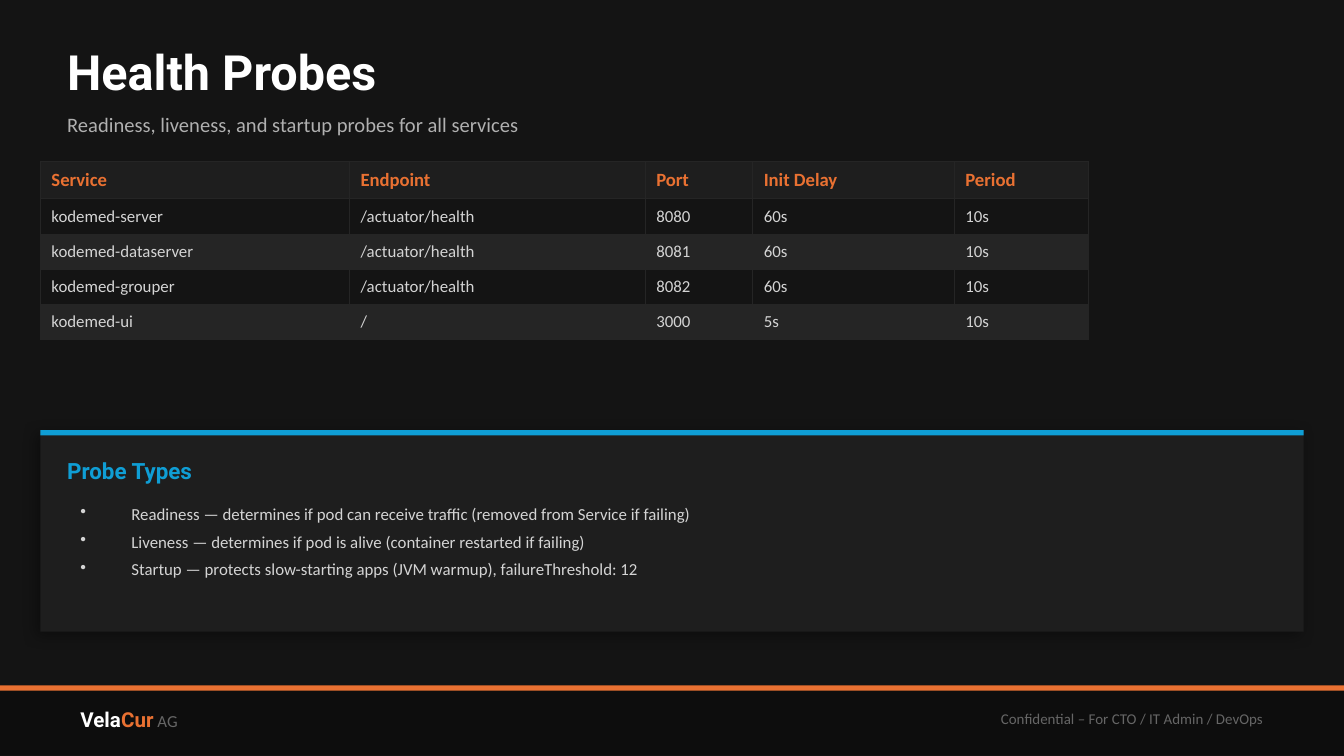
"""Build the Health Probes slide."""
from dataclasses import dataclass

from lxml import etree
from pptx import Presentation
from pptx.dml.color import RGBColor
from pptx.enum.shapes import MSO_SHAPE
from pptx.enum.text import MSO_ANCHOR, PP_ALIGN
from pptx.oxml import parse_xml
from pptx.oxml.ns import qn
from pptx.util import Inches, Pt

RECTANGLE = MSO_SHAPE.RECTANGLE
TOP, MIDDLE = MSO_ANCHOR.TOP, MSO_ANCHOR.MIDDLE
LEFT, RIGHT = PP_ALIGN.LEFT, PP_ALIGN.RIGHT
DRAWING_NS = "http://schemas.openxmlformats.org/drawingml/2006/main"


@dataclass(frozen=True)
class Theme:
    """Colours, fonts and type sizes of the deck."""

    background: str = "141414"
    footer: str = "0D0D0D"
    panel: str = "1E1E1E"
    band: str = "252525"
    orange: str = "E97132"
    blue: str = "0F9ED5"
    white: str = "FFFFFF"
    body: str = "D4D4D4"
    subtle: str = "B0B0B0"
    faint: str = "666666"
    heading_font: str = "Roboto"
    body_font: str = "Calibri"
    title_size: int = 26
    panel_title_size: int = 12
    lead_size: int = 11
    header_size: int = 10
    body_size: int = 9
    note_size: int = 8


class SlideBuilder:
    """Holds the theme and the current page and adds elements to it."""

    def __init__(self, page, theme):
        self.page = page
        self.theme = theme
        page.background.fill.solid()
        page.background.fill.fore_color.rgb = RGBColor.from_string(theme.background)

    def heading(self, size, color):
        """Return the format of bold heading text."""
        return {"name": self.theme.heading_font, "size": Pt(size), "bold": True, "color": color}

    def plain(self, size, color, bold=False):
        """Return the format of body text."""
        return {"name": self.theme.body_font, "size": Pt(size), "bold": bold, "color": color}

    def add_span(self, para, text, style):
        """Add one formatted span to a paragraph."""
        span = para.add_run()
        span.text = text
        for key, value in style.items():
            if key == "color":
                span.font.color.rgb = RGBColor.from_string(value)
            else:
                setattr(span.font, key, value)

    def bar(self, left, top, width, height, color, shadow=False):
        """Add a filled rectangle, with a soft shadow on request."""
        box = self.page.shapes.add_shape(
            RECTANGLE, Inches(left), Inches(top), Inches(width), Inches(height))
        box.shadow.inherit = False
        box.fill.solid()
        box.fill.fore_color.rgb = RGBColor.from_string(color)
        box.line.fill.background()
        if shadow:
            effects = box._element.spPr.find(qn("a:effectLst"))
            effects.append(parse_xml(
                f'<a:outerShdw xmlns:a="{DRAWING_NS}" blurRad="{Pt(8)}" dist="{Pt(3)}" '
                'dir="8100000" algn="bl" rotWithShape="0"><a:srgbClr val="000000">'
                '<a:alpha val="35000"/></a:srgbClr></a:outerShdw>'))

    def text(self, left, top, width, height, spans, align=LEFT, inset=0.0):
        """Add a one-line text box made of (text, style) spans."""
        frame = self.frame(left, top, width, height, MIDDLE, inset)
        frame.paragraphs[0].alignment = align
        for words, style in spans:
            self.add_span(frame.paragraphs[0], words, style)

    def frame(self, left, top, width, height, anchor, inset):
        """Add an empty text box and return its text frame."""
        box = self.page.shapes.add_textbox(
            Inches(left), Inches(top), Inches(width), Inches(height))
        side, edge = Inches(inset), Inches(inset / 2)
        layout = {"word_wrap": True, "vertical_anchor": anchor, "margin_left": side,
                  "margin_right": side, "margin_top": edge, "margin_bottom": edge}
        for key, value in layout.items():
            setattr(box.text_frame, key, value)
        return box.text_frame

    def bullets(self, left, top, width, height, items, style):
        """Add a bulleted list."""
        frame = self.frame(left, top, width, height, TOP, 0.1)
        for index, item in enumerate(items):
            para = frame.add_paragraph() if index else frame.paragraphs[0]
            properties = para._p.get_or_add_pPr()
            properties.set("marL", str(Inches(0.38)))
            properties.set("indent", str(-Inches(0.38)))
            etree.SubElement(properties, qn("a:buChar"), char="•")
            para.space_after = Pt(4)
            self.add_span(para, item, style)

    def table(self, left, top, widths, rows):
        """Add a banded table with a header row."""
        theme = self.theme
        heights = [0.28] + [0.26] * (len(rows) - 1)
        table = self.page.shapes.add_table(
            len(rows), len(widths), Inches(left), Inches(top),
            Inches(sum(widths)), Inches(sum(heights))).table
        for column, width in zip(table.columns, widths):
            column.width = Inches(width)
        header = self.plain(theme.header_size, theme.orange, bold=True)
        body = self.plain(theme.body_size, theme.body)
        for index, values in enumerate(rows):
            table.rows[index].height = Inches(heights[index])
            fill = (theme.background if index % 2 else theme.band) if index else theme.panel
            for column, value in enumerate(values):
                self.cell(table.cell(index, column), value, fill, body if index else header)

    def cell(self, cell, value, fill, style):
        """Fill, pad, outline and label one table cell."""
        layout = {"vertical_anchor": MIDDLE, "margin_left": Pt(6), "margin_right": Pt(6),
                  "margin_top": Pt(4), "margin_bottom": Pt(4)}
        for key, setting in layout.items():
            setattr(cell, key, setting)
        cell.fill.solid()
        cell.fill.fore_color.rgb = RGBColor.from_string(fill)
        properties = cell._tc.get_or_add_tcPr()
        for position, side in enumerate(("lnL", "lnR", "lnT", "lnB")):
            properties.insert(position, parse_xml(
                f'<a:{side} xmlns:a="{DRAWING_NS}" w="{Pt(0.5)}"><a:solidFill>'
                f'<a:srgbClr val="{self.theme.band}"/></a:solidFill></a:{side}>'))
        self.add_span(cell.text_frame.paragraphs[0], value, style)


def main():
    """Build and save the deck."""
    deck = Presentation()
    deck.slide_width, deck.slide_height = Inches(10), Inches(10 * 9 / 16)
    theme = Theme()
    slide = SlideBuilder(deck.slides.add_slide(deck.slide_layouts[6]), theme)

    slide.bar(0, 5.1, 10, 0.52, theme.footer)
    slide.bar(0, 5.1, 10, 0.04, theme.orange)
    slide.text(0.5, 5.15, 3, 0.4, [
        ("Vela", slide.heading(theme.lead_size, theme.white)),
        ("Cur", slide.heading(theme.lead_size, theme.orange)),
        (" AG", slide.plain(theme.body_size, theme.faint)),
    ], inset=0.1)
    slide.text(5.5, 5.15, 4, 0.4, [
        ("Confidential – For CTO / IT Admin / DevOps", slide.plain(theme.note_size, theme.faint)),
    ], align=RIGHT, inset=0.1)

    slide.text(0.5, 0.25, 9, 0.55, [
        ("Health Probes", slide.heading(theme.title_size, theme.white))])
    slide.text(0.5, 0.75, 9, 0.35, [
        ("Readiness, liveness, and startup probes for all services",
         slide.plain(theme.lead_size, theme.subtle))])

    slide.table(0.3, 1.2, [2.3, 2.2, 0.8, 1.5, 1], [
        ("Service", "Endpoint", "Port", "Init Delay", "Period"),
        ("kodemed-server", "/actuator/health", "8080", "60s", "10s"),
        ("kodemed-dataserver", "/actuator/health", "8081", "60s", "10s"),
        ("kodemed-grouper", "/actuator/health", "8082", "60s", "10s"),
        ("kodemed-ui", "/", "3000", "5s", "10s"),
    ])

    slide.bar(0.3, 3.2, 9.4, 1.5, theme.panel, shadow=True)
    slide.bar(0.3, 3.2, 9.4, 0.04, theme.blue)
    slide.text(0.5, 3.35, 9, 0.3, [
        ("Probe Types", slide.heading(theme.panel_title_size, theme.blue))])
    slide.bullets(0.5, 3.7, 9, 0.9, [
        "Readiness — determines if pod can receive traffic (removed from Service if failing)",
        "Liveness — determines if pod is alive (container restarted if failing)",
        "Startup — protects slow-starting apps (JVM warmup), failureThreshold: 12",
    ], slide.plain(theme.body_size, theme.body))

    deck.save("out.pptx")


if __name__ == "__main__":
    main()
